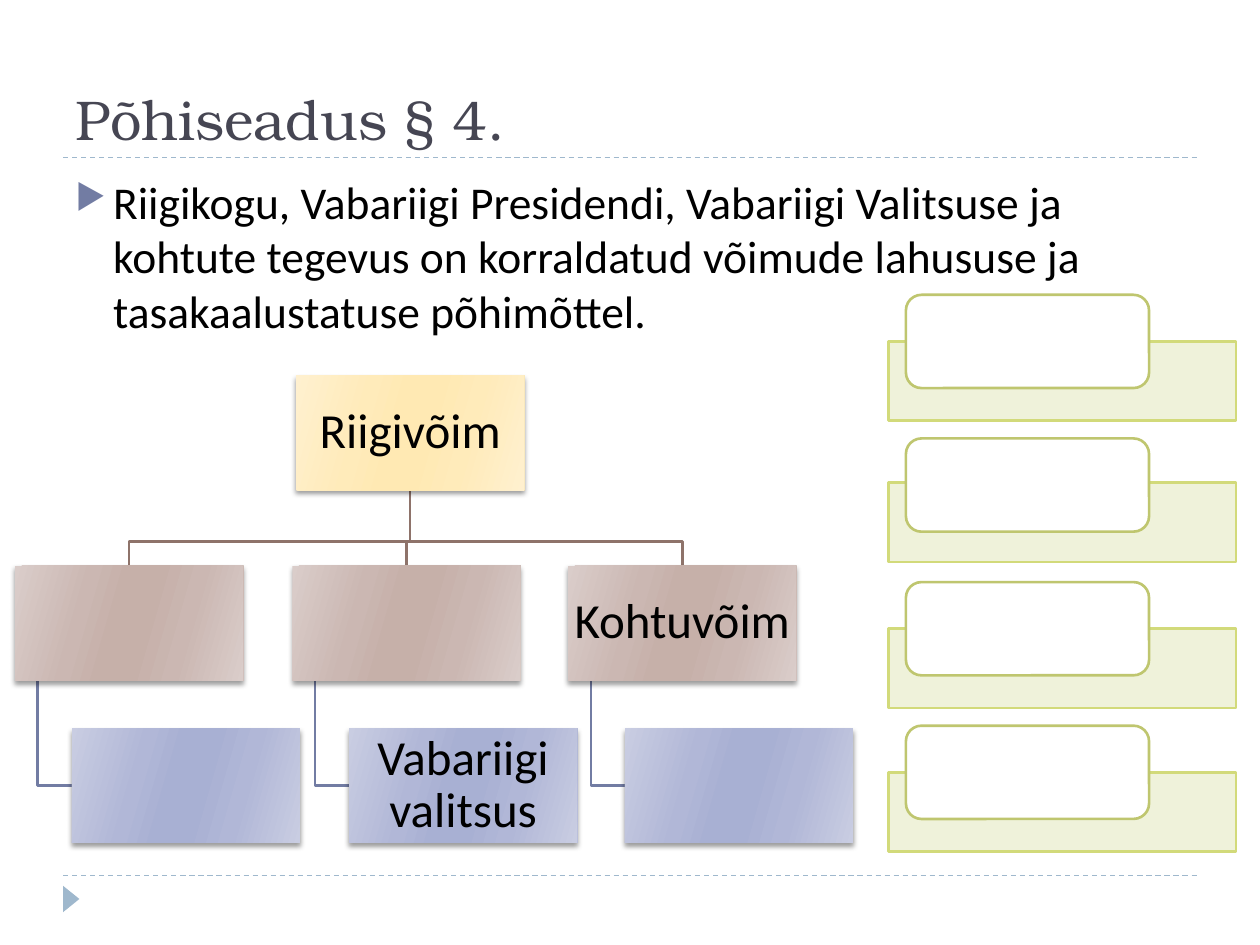
"""Build the slide on Põhiseadus § 4 with a chart of state powers."""
from pptx import Presentation, util as u
from pptx.dml.color import RGBColor
from pptx.enum import dml, shapes, text
from pptx.oxml import parse_xml
from pptx.oxml.ns import nsdecls, qn

RECTANGLE = shapes.MSO_SHAPE.RECTANGLE
YELLOW = ("FFF0CF", "FFEBBA", "FFE9B3")
BROWN = ("DACDCA", "CBB7B2", "C6B0A9")
BLUE = ("C9CDE2", "B1B7D7", "A8B0D3")
BROWN_LINE, BLUE_LINE = "8E736A", "727CA3"
BOX_WIDTH, BOX_HEIGHT = 1.81, 0.91


def color(value):
    return RGBColor.from_string(value)


def inches(*values):
    return [u.Inches(value) for value in values]


def add_xml(parent, xml):
    root, rest = xml[:xml.index(" ")], xml[xml.index(" "):]
    parent.append(parse_xml(f"{root} {nsdecls('a')}{rest}"))


class SlideBuilder:
    def __init__(self, slide, font="Calibri"):
        self.slide = slide
        self.font = font

    def style_text(self, shape, words, size, ink="000000", font=None, margins=None):
        frame = shape.text_frame
        frame.word_wrap = True
        if margins is not None:
            frame.margin_left = frame.margin_right = u.Inches(margins)
            frame.margin_top = frame.margin_bottom = u.Inches(margins)
        paragraph = frame.paragraphs[0]
        paragraph.text = words
        paragraph.font.size = u.Pt(size)
        paragraph.font.name = font or self.font
        paragraph.font.color.rgb = color(ink)
        return paragraph

    def text_box(self, place, words, size, anchor, **style):
        shape = self.slide.shapes.add_textbox(*inches(*place))
        shape.text_frame.vertical_anchor = anchor
        return self.style_text(shape, words, size, **style)

    def bullet(self, place, words, size):
        paragraph = self.text_box(place, words, size, text.MSO_ANCHOR.TOP)
        paragraph.space_before = u.Pt(6)
        properties = paragraph._p.get_or_add_pPr()
        properties.set("marL", str(u.Inches(0.3)))
        properties.set("indent", str(u.Inches(-0.3)))
        add_xml(properties, f'<a:buClr ><a:srgbClr val="{BLUE_LINE}"/></a:buClr>')
        add_xml(properties, '<a:buSzPct val="76000"/>')
        add_xml(properties, '<a:buChar char="▶"/>')

    def dashed_rule(self, top):
        line = self.slide.shapes.add_connector(
            shapes.MSO_CONNECTOR.STRAIGHT, *inches(0.5, top, 9.5, top))
        line.line.color.rgb = color("9FB8CD")
        line.line.width = u.Pt(0.75)
        line.line.dash_style = dml.MSO_LINE.DASH
        add_xml(line._element.spPr, "<a:effectLst />")

    def elbow(self, points, ink):
        start, *rest = [inches(*point) for point in points]
        builder = self.slide.shapes.build_freeform(*start)
        builder.add_line_segments(rest, close=False)
        shape = builder.convert_to_shape()
        shape.shadow.inherit = False
        shape.fill.background()
        shape.line.color.rgb = color(ink)
        shape.line.width = u.Pt(1.5)

    def shape(self, kind, place, fill=None, outline=None, alpha=None):
        shape = self.slide.shapes.add_shape(kind, *inches(*place))
        shape.shadow.inherit = False
        if fill:
            shape.fill.solid()
            shape.fill.fore_color.rgb = color(fill)
        if alpha:
            add_xml(next(shape._element.spPr.iter(qn("a:srgbClr"))),
                    f'<a:alpha val="{alpha * 1000}"/>')
        if outline:
            shape.line.color.rgb = color(outline)
            shape.line.width = u.Pt(1.5)
        else:
            shape.line.fill.background()
        return shape

    def power_box(self, left, top, tones, words=""):
        shape = self.shape(RECTANGLE, (left, top, BOX_WIDTH, BOX_HEIGHT))
        shape.fill.gradient()
        shape.fill.gradient_angle = 344
        properties = shape._element.spPr
        stops = next(properties.iter(qn("a:gsLst")))
        for stop in list(stops):
            stops.remove(stop)
        for position, tone in zip((0, 30, 45, 55, 73, 100), tones + tones[::-1]):
            add_xml(stops, f'<a:gs pos="{position * 1000}"><a:srgbClr val="{tone}"/></a:gs>')
        add_xml(properties.find(qn("a:effectLst")),
                f'<a:outerShdw blurRad="{u.Pt(3)}" dist="{u.Pt(2)}" dir="5400000" '
                'rotWithShape="0"><a:srgbClr val="000000"><a:alpha val="40000"/>'
                '</a:srgbClr></a:outerShdw>')
        if words:
            shape.text_frame.vertical_anchor = text.MSO_ANCHOR.MIDDLE
            paragraph = self.style_text(shape, words, 28, margins=0.02)
            paragraph.alignment = text.PP_ALIGN.CENTER
            paragraph.line_spacing = 0.9


def main():
    presentation = Presentation()
    presentation.slide_width, presentation.slide_height = inches(10, 7.5)
    builder = SlideBuilder(presentation.slides.add_slide(presentation.slide_layouts[6]))

    for top in (6.95, 1.25):
        builder.dashed_rule(top)
    marker = builder.shape(shapes.MSO_SHAPE.ISOSCELES_TRIANGLE,
                           (0.46, 7.07, 0.21, 0.13), "9FB8CD")
    marker.rotation = 90
    builder.text_box((0.5, 0.17, 9, 1.08), "Põhiseadus § 4.", 32,
                     text.MSO_ANCHOR.BOTTOM, ink="464653", font="TeX Gyre Bonum")
    builder.bullet((0.5, 1.33, 9, 5.4),
                   "Riigikogu, Vabariigi Presidendi, Vabariigi Valitsuse ja kohtute "
                   "tegevus on korraldatud võimude lahususe ja tasakaalustatuse "
                   "põhimõttel.", 26)

    root_left, root_top, power_top, holder_top = 2.35, 2.98, 4.49, 5.78
    trunk = root_left + BOX_WIDTH / 2
    columns = [(0.12, "", ""), (2.32, "", "Vabariigi valitsus"), (4.51, "Kohtuvõim", "")]
    for left, _, _ in columns:
        center, stem, middle = left + BOX_WIDTH / 2, left + 0.18, holder_top + BOX_HEIGHT / 2
        builder.elbow([(stem, power_top + BOX_HEIGHT), (stem, middle),
                       (left + 0.45, middle)], BLUE_LINE)
        builder.elbow([(trunk, root_top + BOX_HEIGHT), (trunk, 4.3),
                       (center, 4.3), (center, power_top)], BROWN_LINE)
    builder.power_box(root_left, root_top, YELLOW, "Riigivõim")
    for left, power, holder in columns:
        builder.power_box(left, power_top, BROWN, power)
        builder.power_box(left + 0.45, holder_top, BLUE, holder)

    for row, band_top in enumerate((2.71, 3.83, 4.99, 6.13)):
        builder.shape(RECTANGLE, (7.05, band_top, 2.76, 0.63), "EEF1D7", "D2DA7A", 90)
        builder.shape(shapes.MSO_SHAPE.ROUNDED_RECTANGLE,
                      (7.19, 2.34 + 1.14 * row, 1.93, 0.74), "FFFFFF", "BFC66F")
    presentation.save("out.pptx")


if __name__ == "__main__":
    main()
